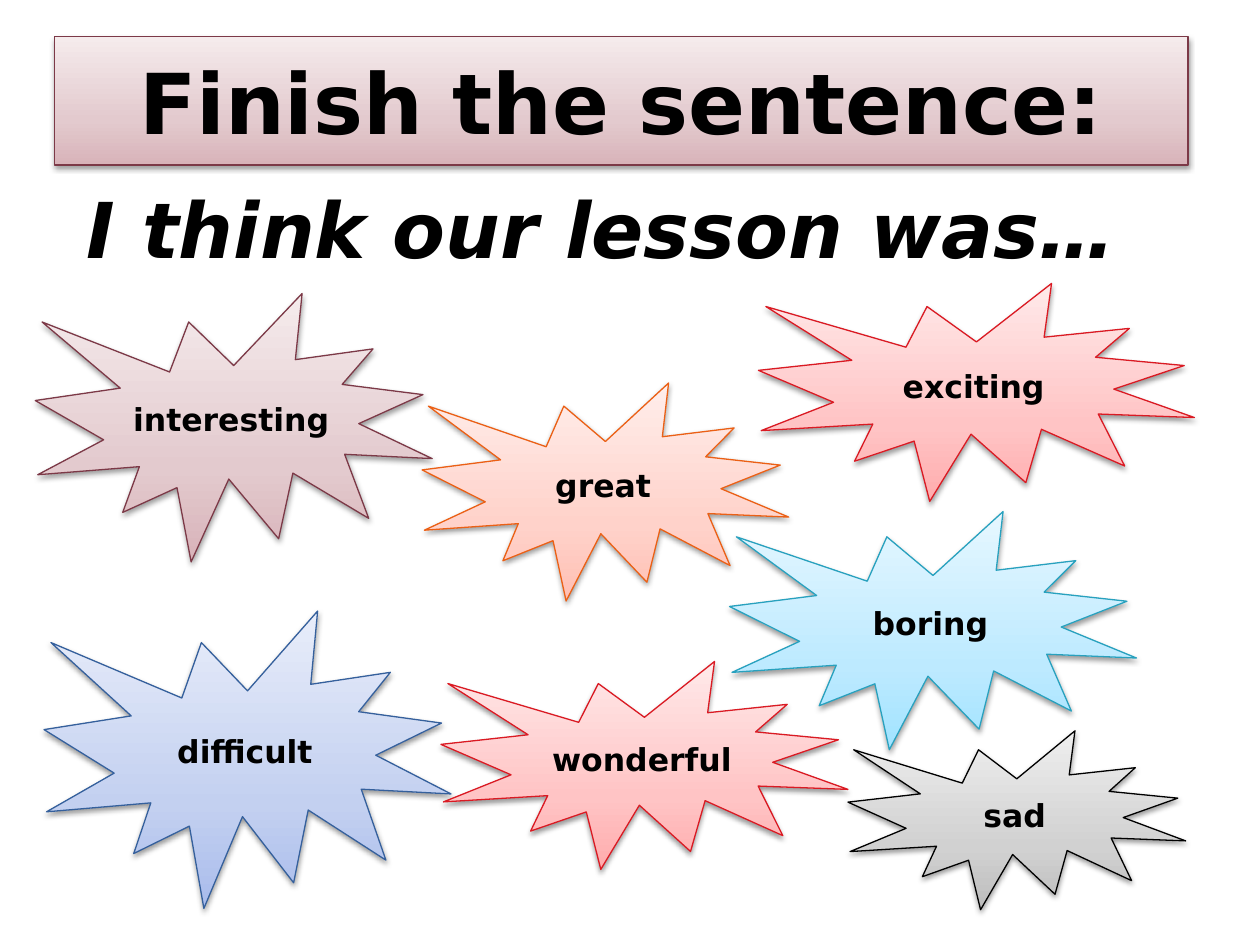
from lxml import etree
from pptx import Presentation
from pptx.dml.color import RGBColor
from pptx.enum import shapes, text
from pptx.oxml import ns
from pptx.util import Inches, Pt

FONT = "DejaVu Sans"
BLACK = RGBColor(0, 0, 0)

# Palettes: outline, then gradient colours from bottom to top
STOPS = (0, 35, 100)
MAUVE = ("7C3947", "D8B3B9", "E3CACE", "F5EBEC")
BLUE = ("35609C", "A9BCEC", "C3D0F0", "E8EDFA")
ORANGE = ("EB6015", "FFBFB3", "FFD2CA", "FFEEEB")
GREY = ("000000", "BDBDBD", "D1D1D1", "EEEEEE")
RED = ("DA1A23", "FFACAD", "FFC4C5", "FFE9E9")
CYAN = ("28A1BE", "A1E3FF", "BDEAFF", "E6F7FF")

# Content: words with left, top, width, height in inches
HEADING = "Finish the sentence:"
SENTENCE = "I think our lesson was…"
ANSWERS = [
    ("interesting", MAUVE, (0.28, 2.33, 3.15, 2.13)),
    ("difficult", BLUE, (0.35, 4.85, 3.23, 2.36)),
    ("great", ORANGE, (3.35, 3.04, 2.91, 1.73)),
    ("sad", GREY, (6.73, 5.8, 2.68, 1.42)),
    ("wonderful", RED, (3.5, 5.25, 3.23, 1.65)),
    ("boring", CYAN, (5.79, 4.06, 3.23, 1.89)),
    ("exciting", RED, (6.02, 2.25, 3.46, 1.73)),
]


def add_child(parent, tag, **attributes):
    return etree.SubElement(parent, ns.qn(tag), attributes)


def paint(shape, palette):
    """Give a shape its vertical gradient, thin outline and soft shadow."""
    outline, *colours = palette
    shape.fill.gradient()
    shape.fill.gradient_angle = 90
    shape.line.color.rgb = RGBColor.from_string(outline)
    shape.line.width = Pt(0.75)

    properties = shape._element.spPr
    stop_list = properties.find(".//" + ns.qn("a:gsLst"))
    for old_stop in list(stop_list):
        stop_list.remove(old_stop)
    for position, colour in zip(STOPS, colours):
        stop = add_child(stop_list, "a:gs", pos=str(position * 1000))
        add_child(stop, "a:srgbClr", val=colour)

    shape.shadow.inherit = False
    shadow = add_child(properties.find(ns.qn("a:effectLst")), "a:outerShdw",
                       blurRad=str(Pt(3.1)), dist=str(Pt(1.6)),
                       dir="5400000", rotWithShape="0")
    shadow_colour = add_child(shadow, "a:srgbClr", val="000000")
    add_child(shadow_colour, "a:alpha", val="38000")


def write(shape, words, size, align, italic=None):
    frame = shape.text_frame
    frame.text = words
    paragraph = frame.paragraphs[0]
    paragraph.alignment = align
    font = paragraph.font
    font.name, font.size = FONT, Pt(size)
    font.bold, font.italic = True, italic
    font.color.rgb = BLACK
    return frame


presentation = Presentation()
presentation.slide_width, presentation.slide_height = Inches(10), Inches(7.5)
slide = presentation.slides.add_slide(presentation.slide_layouts[5])

# Heading
heading = slide.shapes.title
heading.left, heading.top, heading.width, heading.height = map(
    Inches, (0.43, 0.29, 9, 1.02))
paint(heading, MAUVE)
heading_frame = write(heading, HEADING, 48, text.PP_ALIGN.CENTER)
heading_frame.vertical_anchor = text.MSO_ANCHOR.MIDDLE
heading_frame.auto_size = text.MSO_AUTO_SIZE.NONE

# Sentence to finish
sentence = slide.shapes.add_textbox(*map(Inches, (0.59, 1.39, 8.92, 0.84)))
sentence_frame = write(sentence, SENTENCE, 44, text.PP_ALIGN.LEFT, italic=True)
sentence_frame.word_wrap = True
sentence_frame.auto_size = text.MSO_AUTO_SIZE.SHAPE_TO_FIT_TEXT

# Answers in bursts
for word, palette, place in ANSWERS:
    burst = slide.shapes.add_shape(
        shapes.MSO_SHAPE.EXPLOSION1, *map(Inches, place))
    paint(burst, palette)
    burst_frame = write(burst, word, 18, text.PP_ALIGN.CENTER)
    burst_frame.vertical_anchor = text.MSO_ANCHOR.MIDDLE
    burst_frame.word_wrap = False

presentation.save("out.pptx")
